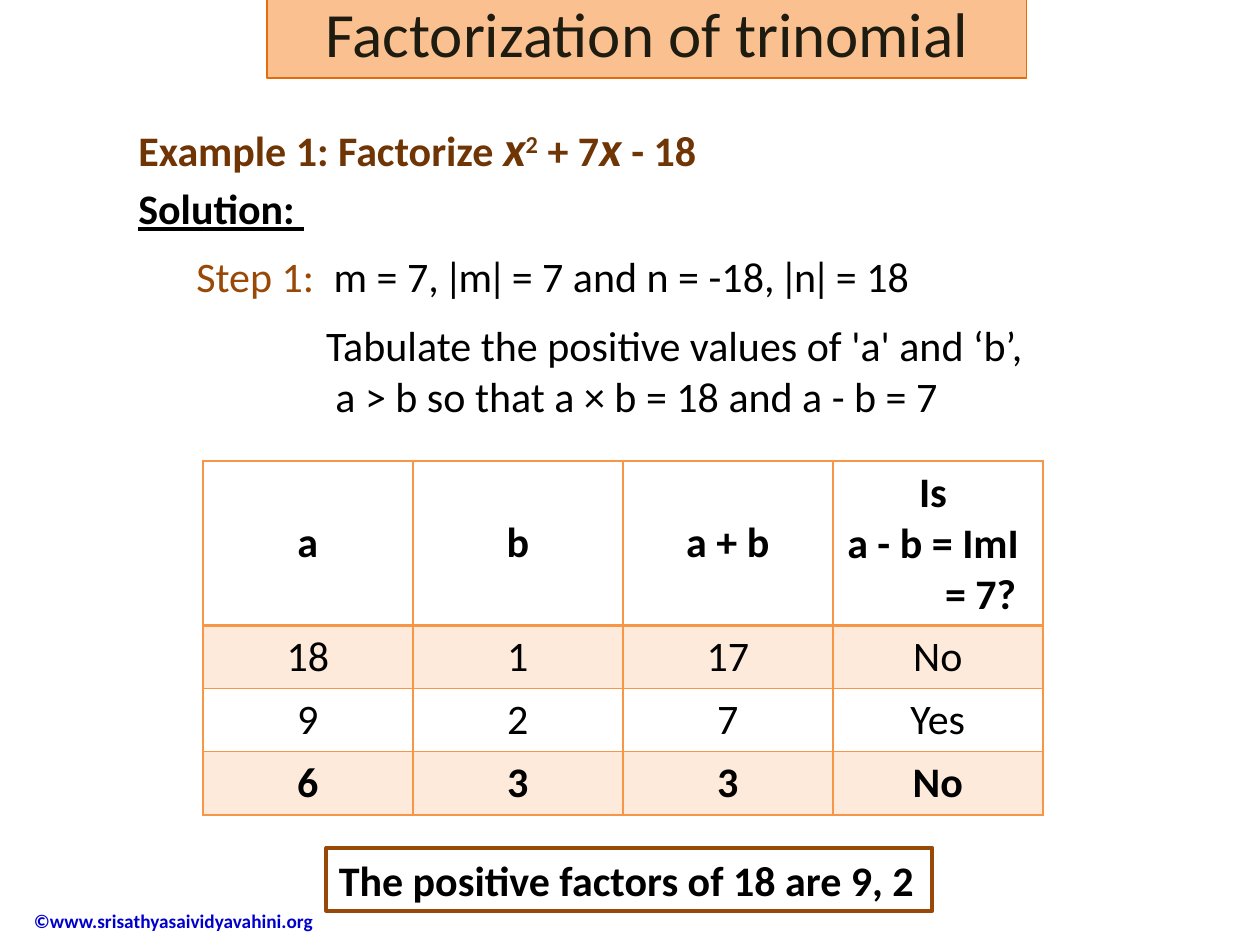
"""Build the slide on factorizing a trinomial."""
from lxml import etree
from pptx import Presentation
from pptx.dml.color import RGBColor
from pptx.enum.shapes import MSO_SHAPE
from pptx.enum.text import MSO_ANCHOR, MSO_AUTO_SIZE, PP_ALIGN
from pptx.oxml.ns import qn
from pptx.util import Pt

RECTANGLE = MSO_SHAPE.RECTANGLE
TOP, MIDDLE = MSO_ANCHOR.TOP, MSO_ANCHOR.MIDDLE
LEFT, CENTER = PP_ALIGN.LEFT, PP_ALIGN.CENTER
NO_AUTOFIT = MSO_AUTO_SIZE.NONE
BROWN, ORANGE, PEACH = "984807", "F79646", "FDEADA"


def color(hex_string):
    """Turn a hex string into a colour."""
    return RGBColor.from_string(hex_string)


def add_text(paragraph, text, size=24, fill="000000", bold=False, italic=False,
             underline=False, baseline=None, align=LEFT, margin=0):
    """Add a formatted run and set the layout of its paragraph."""
    paragraph.alignment = align
    if margin:
        properties = paragraph._p.get_or_add_pPr()
        properties.set("marL", str(Pt(margin)))
        properties.set("indent", "0")
    run = paragraph.add_run()
    run.text = text
    font = run.font
    font.name, font.size, font.bold = "Calibri", Pt(size), bold
    font.italic, font.underline = italic, underline
    font.color.rgb = color(fill)
    if baseline:
        run._r.get_or_add_rPr().set("baseline", str(baseline))


presentation = Presentation()
presentation.slide_width, presentation.slide_height = Pt(720), Pt(540)
slide = presentation.slides.add_slide(presentation.slide_layouts[5])

title = slide.shapes.title
title.left, title.top, title.width, title.height = Pt(152.64), Pt(-6.48), Pt(434.16), Pt(51.1)
title.fill.solid()
title.fill.fore_color.rgb = color("FAC090")
title.line.color.rgb = color("E46C0A")
title.line.width = Pt(0.75)
title.text_frame.auto_size = NO_AUTOFIT
title.text_frame.vertical_anchor = TOP
add_text(title.text_frame.paragraphs[0], "Factorization of trinomial", size=36, fill="1E1C11", align=CENTER)

boxes = {}
for name, left, top, width, height, wrap, anchor in [
    ("copyright", -23.76, 511.2, 217.44, 29.5, True, MIDDLE),
    ("example", 72, 63.36, 337, 41, False, TOP),
    ("solution", 72, 100.8, 110.2, 36, False, TOP),
    ("step", 105.12, 139.68, 535, 36, True, TOP),
    ("task", 102.96, 179.28, 504, 65.5, True, TOP),
]:
    frame = slide.shapes.add_textbox(Pt(left), Pt(top), Pt(width), Pt(height)).text_frame
    frame.word_wrap, frame.vertical_anchor = wrap, anchor
    boxes[name] = frame

add_text(boxes["copyright"].paragraphs[0], "©www.srisathyasaividyavahini.org",
         size=11, fill="0000CC", bold=True, margin=36)

for text, formatting in [
    ("Example 1: Factorize ", {}),
    ("x", {"size": 28, "italic": True}),
    ("2", {"baseline": 30000}),
    (" + 7", {}),
    ("x", {"size": 28, "italic": True}),
    (" - 18", {}),
]:
    add_text(boxes["example"].paragraphs[0], text, fill="6F3505", bold=True, **formatting)

add_text(boxes["solution"].paragraphs[0], "Solution: ", bold=True, underline=True)

step = boxes["step"].paragraphs[0]
tabs = etree.SubElement(step._p.get_or_add_pPr(), qn("a:tabLst"))
etree.SubElement(tabs, qn("a:tab"), pos=str(Pt(78.5)), algn="l")
add_text(step, "Step 1:\t", fill=BROWN)
add_text(step, "m = 7, ǀmǀ = 7 and n = -18, ǀnǀ = 18")

task = boxes["task"]
add_text(task.paragraphs[0], "Tabulate the positive values of 'a' and ‘b’,", margin=76.3)
add_text(task.add_paragraph(), "a > b so that a × b = 18 and a - b = 7", margin=81.7)

rows = [
    ["a", "b", "a + b", "Is \na - b = ImI \n= 7?"],
    ["18", "1", "17", "No"],
    ["9", "2", "7", "Yes"],
    ["6", "3", "3", "No"],
]
table = slide.shapes.add_table(4, 4, Pt(115.92), Pt(263.52), Pt(480), Pt(202)).table
for row_index, values in enumerate(rows):
    table.rows[row_index].height = Pt(36 if row_index else 94)
    for column_index, value in enumerate(values):
        cell = table.cell(row_index, column_index)
        cell.vertical_anchor = MIDDLE
        for line_index, line in enumerate(value.split("\n")):
            paragraph = cell.text_frame.add_paragraph() if line_index else cell.text_frame.paragraphs[0]
            add_text(paragraph, line, bold=row_index in (0, 3), align=CENTER,
                     margin=49 if line_index == 2 else 0)
        cell_properties = cell._tc.get_or_add_tcPr()
        for side in "LRTB":
            thick = (row_index, side) in ((0, "B"), (1, "T"))
            border = etree.SubElement(cell_properties, qn(f"a:ln{side}"), w=str(Pt(2 if thick else 1)))
            border_fill = etree.SubElement(border, qn("a:solidFill"))
            etree.SubElement(border_fill, qn("a:srgbClr"), val=ORANGE)
        if row_index % 2:
            cell.fill.solid()
            cell.fill.fore_color.rgb = color(PEACH)
        else:
            cell.fill.background()

answer = slide.shapes.add_shape(RECTANGLE, Pt(186.48), Pt(484.56), Pt(346.32), Pt(36))
answer.shadow.inherit = False
answer.fill.background()
answer.line.color.rgb = color(BROWN)
answer.line.width = Pt(2.25)
answer.text_frame.word_wrap = True
answer.text_frame.vertical_anchor = TOP
add_text(answer.text_frame.paragraphs[0], "The positive factors of 18 are 9, 2", bold=True)

presentation.save("out.pptx")
